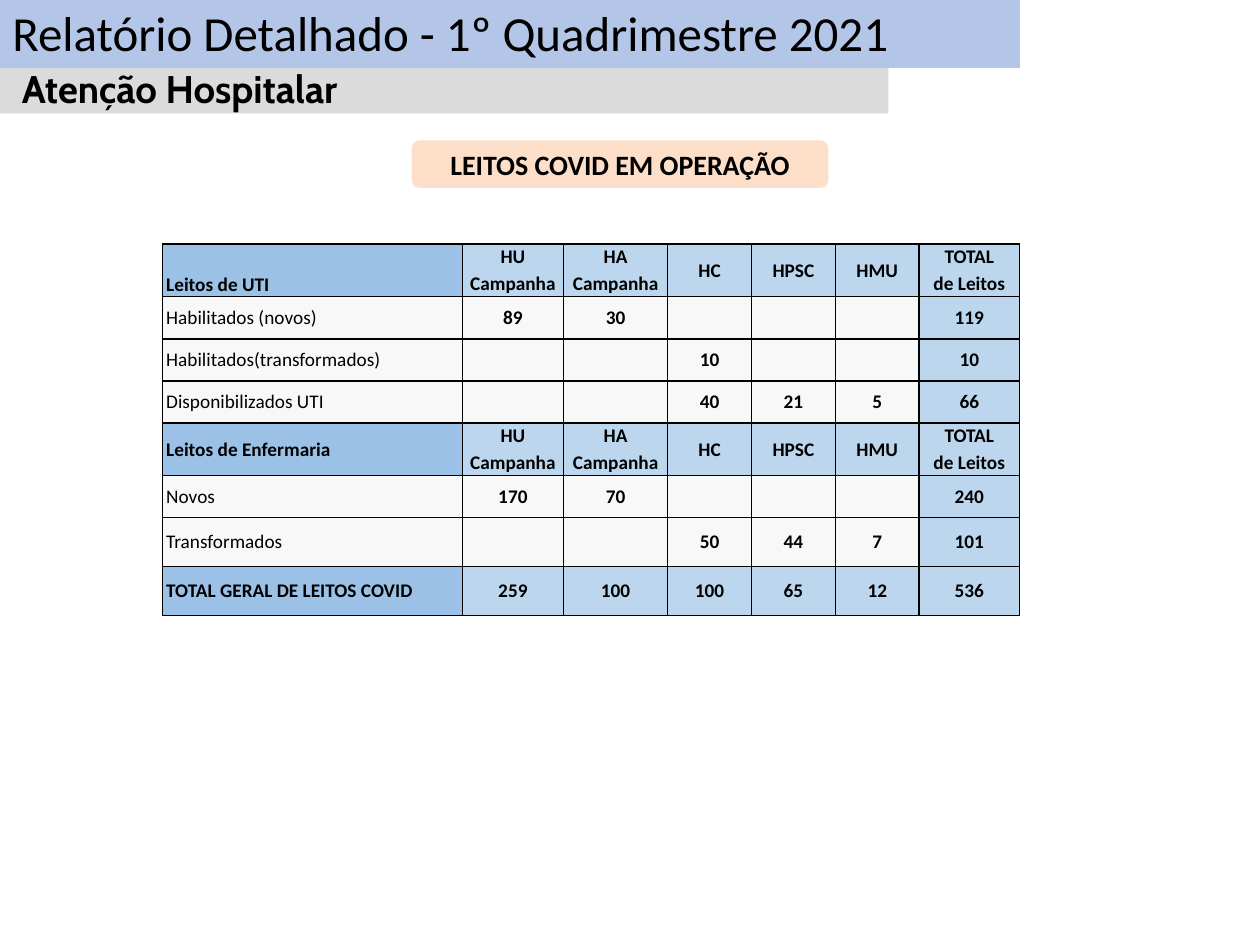
from pptx import Presentation
from pptx.dml.color import RGBColor as RGB
from pptx.enum.shapes import MSO_SHAPE as SHAPE
from pptx.enum.text import MSO_ANCHOR as ANCHOR, PP_ALIGN as ALIGN
from pptx.oxml import parse_xml
from pptx.oxml.ns import nsdecls
from pptx.util import Cm, Pt

BLACK = RGB(0x00, 0x00, 0x00)
BAND = RGB(0xB4, 0xC6, 0xE7)
GRAY = RGB(0xDB, 0xDB, 0xDB)
PEACH = RGB(0xFD, 0xDE, 0xC9)
BLUE = RGB(0x9B, 0xC2, 0xE6)
PALE = RGB(0xBC, 0xD6, 0xED)
WHITE = RGB(0xF8, 0xF8, 0xF8)

TITLE = "Relatório Detalhado - 1º Quadrimestre 2021"
TOPIC = "Atenção Hospitalar"
LABEL = "LEITOS COVID EM OPERAÇÃO"
HEADS = ["HU\nCampanha", "HA\nCampanha", "HC", "HPSC", "HMU", "TOTAL\nde Leitos"]
ROWS = [
    ["Leitos de UTI", *HEADS],
    ["Habilitados (novos)", "89", "30", "", "", "", "119"],
    ["Habilitados(transformados)", "", "", "10", "", "", "10"],
    ["Disponibilizados UTI", "", "", "40", "21", "5", "66"],
    ["Leitos de Enfermaria", *HEADS],
    ["Novos", "170", "70", "", "", "", "240"],
    ["Transformados", "", "", "50", "44", "7", "101"],
    ["TOTAL GERAL DE LEITOS COVID", "259", "100", "100", "65", "12", "536"],
]
STRONG = {0, 4, 7}
WIDTHS = [6.05, 2.04, 2.1, 1.69, 1.69, 1.69, 2.02]
HEIGHTS = [1.06, 0.85, 0.85, 0.85, 1.06, 0.85, 0.98, 0.98]


def write(frame, text, size=11, bold=False, font="Calibri", align=ALIGN.LEFT, gap=0):
    for i, line in enumerate(text.split("\n")):
        para = frame.add_paragraph() if i else frame.paragraphs[0]
        para.alignment = align
        para.line_spacing = 1
        para.space_before = Pt(gap if i else 0)
        run = para.add_run()
        run.text = line
        run.font.name = font
        run.font.size = Pt(size)
        run.font.bold = bold
        run.font.color.rgb = BLACK


def clear(frame, anchor=ANCHOR.TOP):
    frame.margin_left = frame.margin_right = 0
    frame.margin_top = frame.margin_bottom = 0
    frame.vertical_anchor = anchor
    frame.word_wrap = True
    return frame


def block(shapes, kind, box, color):
    shape = shapes.add_shape(kind, *map(Cm, box))
    shape.shadow.inherit = False
    shape.fill.solid()
    shape.fill.fore_color.rgb = color
    shape.line.fill.background()
    return shape


def edge(cell, side, width):
    cell._tc.get_or_add_tcPr().append(parse_xml(
        f'<a:{side} {nsdecls("a")} w="{Pt(width)}"><a:solidFill>'
        f'<a:srgbClr val="{BLACK}"/></a:solidFill></a:{side}>'))


def fill_grid(shapes):
    frame = shapes.add_table(len(ROWS), len(WIDTHS), Cm(3.27), Cm(4.92),
                             Cm(sum(WIDTHS)), Cm(sum(HEIGHTS)))
    grid = frame.table
    grid.first_row = grid.horz_banding = False
    for col, width in zip(grid.columns, WIDTHS):
        col.width = Cm(width)
    for r, (row, height) in enumerate(zip(ROWS, HEIGHTS)):
        grid.rows[r].height = Cm(height)
        for c, text in enumerate(row):
            cell = grid.cell(r, c)
            cell.margin_left = Cm(0 if c else 0.08)
            cell.margin_right = cell.margin_top = cell.margin_bottom = 0
            cell.vertical_anchor = ANCHOR.BOTTOM if r == c == 0 else ANCHOR.MIDDLE
            thin = 0.75 if r > 4 else 1
            low = 0.75 if r > 3 else 1
            for side, width in zip(("lnL", "lnR", "lnT", "lnB"),
                                   (1 if c else 0.75, 1, thin, low)):
                edge(cell, side, width)
            cell.fill.solid()
            last = c == len(WIDTHS) - 1
            tint = PALE if last or r in STRONG else WHITE
            cell.fill.fore_color.rgb = BLUE if r in STRONG and c == 0 else tint
            if text:
                write(cell.text_frame, text, bold=c > 0 or r in STRONG, gap=1.8,
                      align=ALIGN.CENTER if c else ALIGN.LEFT)


def main():
    deck = Presentation()
    deck.slide_width, deck.slide_height = Cm(25.4), Cm(19.05)
    slide = deck.slides.add_slide(deck.slide_layouts[5])
    shapes = slide.shapes

    block(shapes, SHAPE.RECTANGLE, (0, 1.37, 17.91, 0.92), GRAY)
    block(shapes, SHAPE.RECTANGLE, (0, 0, 20.56, 1.37), BAND)

    title = shapes.title
    title.left, title.top, title.width, title.height = map(Cm, (0.25, 0.05, 18.5, 1.25))
    write(clear(title.text_frame), TITLE, size=28)
    shapes._spTree.append(title._element)

    fill_grid(shapes)

    pill = block(shapes, SHAPE.ROUNDED_RECTANGLE, (8.3, 2.83, 8.4, 0.96), PEACH)
    write(clear(pill.text_frame, ANCHOR.MIDDLE), LABEL, size=16, bold=True,
          align=ALIGN.CENTER)

    topic = shapes.add_textbox(*map(Cm, (0.44, 1.31, 15.57, 0.96)))
    write(clear(topic.text_frame), TOPIC, size=22, bold=True, font="Cabin")

    deck.save("out.pptx")


if __name__ == "__main__":
    main()
